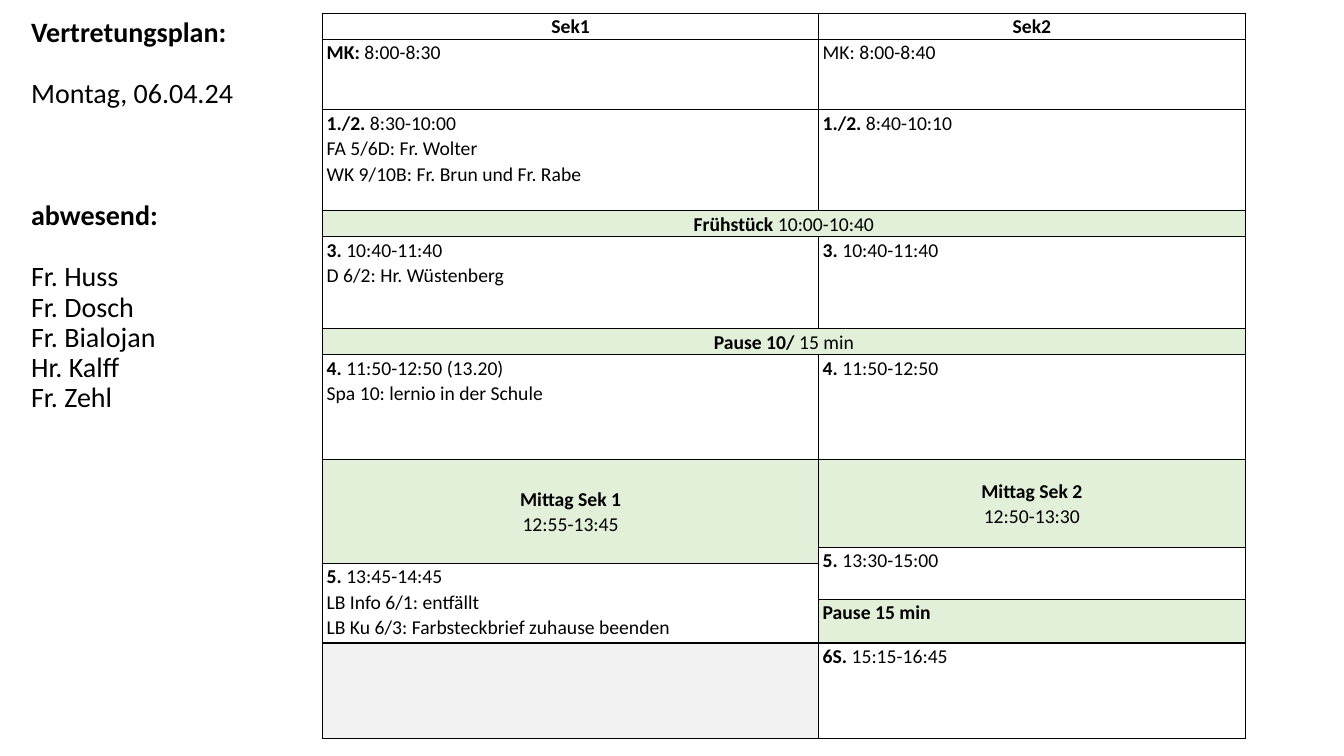
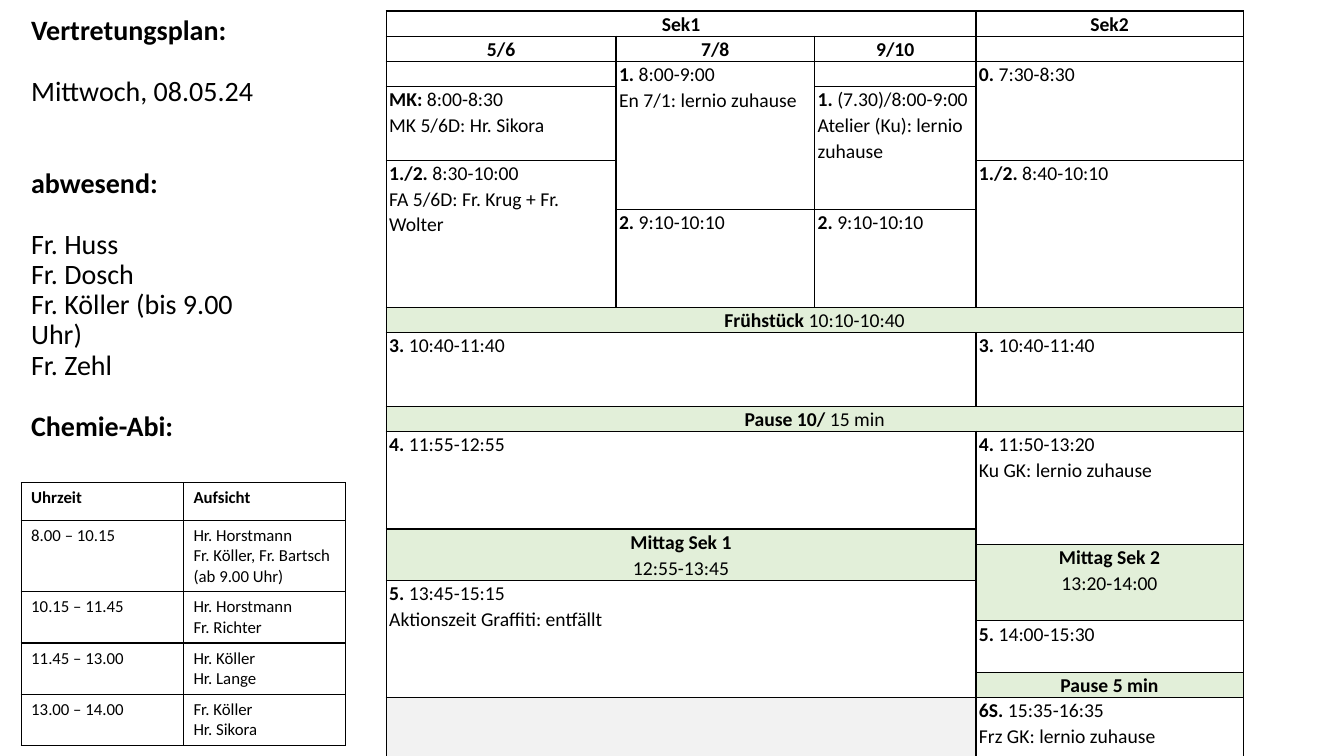
from itertools import product

from pptx import Presentation
from pptx.dml.color import RGBColor
from pptx.enum.text import MSO_ANCHOR, PP_ALIGN
from pptx.oxml.ns import qn
from pptx.util import Inches, Pt
from lxml.etree import SubElement

FONT = "Calibri"
BLACK, WHITE, GREEN, GREY = "000000", "FFFFFF", "E2EFD9", "F2F2F2"
LEFT, CENTER = PP_ALIGN.LEFT, PP_ALIGN.CENTER
TOP, MIDDLE = MSO_ANCHOR.TOP, MSO_ANCHOR.MIDDLE
SIDEBAR_LEFT, SIDEBAR_WIDTH, SIDEBAR_LINE = 0.21, 2.44, 22

STYLES = {
    "lesson": (WHITE, LEFT, TOP),
    "head": (WHITE, CENTER, MIDDLE),
    "break": (GREEN, CENTER, MIDDLE),
    "high break": (GREEN, CENTER, TOP),
    "left break": (GREEN, LEFT, TOP),
    "closed": (GREY, LEFT, TOP),
}

# Cells hold row, column, rows spanned, columns spanned, style and text; "|" ends the bold part.
MONDAY = {
    "sidebar": {
        "top": 0.13,
        "height": 4.57,
        "lines": [
            (0, "Vertretungsplan:|"),
            (1, "Montag, 06.04.24"),
            (3, "abwesend:|"),
            (1, "Fr. Huss"),
            (0, "Fr. Dosch"),
            (0, "Fr. Bialojan"),
            (0, "Hr. Kalff"),
            (0, "Fr. Zehl"),
        ],
    },
    "tables": [{
        "at": (3.2, 0.13),
        "size": 14,
        "spacing": 1.07,
        "inset": (0.04, 0),
        "columns": [4.92, 4.23],
        "rows": [0.26, 0.7, 1, 0.26, 0.91, 0.26, 1.04, 0.87, 0.16, 0.36, 0.43, 0.95],
        "cells": [
            (0, 0, 1, 1, "head", "Sek1|"),
            (0, 1, 1, 1, "head", "Sek2|"),
            (1, 0, 1, 1, "lesson", "MK: |8:00-8:30"),
            (1, 1, 1, 1, "lesson", "MK: 8:00-8:40"),
            (2, 0, 1, 1, "lesson",
             "1./2.| 8:30-10:00\nFA 5/6D: Fr. Wolter\nWK 9/10B: Fr. Brun und Fr. Rabe"),
            (2, 1, 1, 1, "lesson", "1./2. |8:40-10:10"),
            (3, 0, 1, 2, "break", "Frühstück| 10:00-10:40"),
            (4, 0, 1, 1, "lesson", "3. |10:40-11:40\nD 6/2: Hr. Wüstenberg"),
            (4, 1, 1, 1, "lesson", "3. |10:40-11:40"),
            (5, 0, 1, 2, "break", "Pause 10/ |15 min"),
            (6, 0, 1, 1, "lesson", "4. |11:50-12:50 (13.20)\nSpa 10: lernio in der Schule"),
            (6, 1, 1, 1, "lesson", "4. |11:50-12:50"),
            (7, 0, 2, 1, "break", "Mittag Sek 1|\n12:55-13:45"),
            (7, 1, 1, 1, "break", "Mittag Sek 2|\n12:50-13:30"),
            (8, 1, 2, 1, "lesson", "5.| 13:30-15:00"),
            (9, 0, 2, 1, "lesson",
             "5.| 13:45-14:45\nLB Info 6/1: entfällt\nLB Ku 6/3: Farbsteckbrief zuhause beenden"),
            (10, 1, 1, 1, "left break", "Pause 15 min|"),
            (11, 0, 1, 1, "closed", ""),
            (11, 1, 1, 1, "lesson", "6S.| 15:15-16:45"),
        ],
    }],
}

SUPERVISION = [
    ("Uhrzeit|", "Aufsicht|"),
    ("8.00 – 10.15", "Hr. Horstmann\nFr. Köller, Fr. Bartsch (ab 9.00 Uhr)"),
    ("10.15 – 11.45", "Hr. Horstmann\nFr. Richter"),
    ("11.45 – 13.00", "Hr. Köller\nHr. Lange"),
    ("13.00 – 14.00", "Fr. Köller\nHr. Sikora"),
]

WEDNESDAY = {
    "sidebar": {
        "top": 0.11,
        "height": 5.46,
        "lines": [
            (0, "Vertretungsplan:|"),
            (1, "Mittwoch, 08.05.24"),
            (2, "abwesend:|"),
            (1, "Fr. Huss"),
            (0, "Fr. Dosch"),
            (0, "Fr. Köller (bis 9.00 Uhr)"),
            (0, "Fr. Zehl"),
            (1, "Chemie-Abi:|"),
        ],
    },
    "tables": [{
        "at": (3.83, 0.11),
        "size": 14,
        "spacing": 1.07,
        "inset": (0.03, 0),
        "columns": [2.28, 1.97, 1.6, 2.65],
        "rows": [0.25, 0.25, 0.25, 0.73, 0.49, 0.97, 0.25, 0.73,
                 0.25, 0.97, 0.15, 0.36, 0.4, 0.51, 0.25, 0.75],
        "cells": [
            (0, 0, 1, 3, "head", "Sek1|"),
            (0, 3, 1, 1, "head", "Sek2|"),
            (1, 0, 1, 1, "head", "5/6|"),
            (1, 1, 1, 1, "head", "7/8|"),
            (1, 2, 1, 1, "head", "9/10|"),
            (1, 3, 1, 1, "head", ""),
            (2, 0, 1, 1, "lesson", ""),
            (2, 1, 3, 1, "lesson", "1.| 8:00-9:00\nEn 7/1: lernio zuhause"),
            (2, 2, 1, 1, "lesson", ""),
            (2, 3, 2, 1, "lesson", "0.| 7:30-8:30"),
            (3, 0, 1, 1, "lesson", "MK: |8:00-8:30\nMK 5/6D: Hr. Sikora"),
            (3, 2, 2, 1, "lesson", "1.| (7.30)/8:00-9:00\nAtelier (Ku): lernio zuhause"),
            (4, 0, 2, 1, "lesson", "1./2. |8:30-10:00\nFA 5/6D: Fr. Krug + Fr. Wolter"),
            (4, 3, 2, 1, "lesson", "1./2.| 8:40-10:10"),
            (5, 1, 1, 1, "lesson", "2.| 9:10-10:10"),
            (5, 2, 1, 1, "lesson", "2.| 9:10-10:10"),
            (6, 0, 1, 4, "break", "Frühstück| 10:10-10:40"),
            (7, 0, 1, 3, "lesson", "3. |10:40-11:40"),
            (7, 3, 1, 1, "lesson", "3. |10:40-11:40"),
            (8, 0, 1, 4, "break", "Pause 10/ |15 min"),
            (9, 0, 1, 3, "lesson", "4. |11:55-12:55"),
            (9, 3, 2, 1, "lesson", "4. |11:50-13:20\nKu GK: lernio zuhause"),
            (10, 0, 2, 3, "break", "Mittag Sek 1|\n12:55-13:45"),
            (11, 3, 2, 1, "high break", "Mittag Sek 2|\n13:20-14:00"),
            (12, 0, 3, 3, "lesson", "5.| 13:45-15:15\nAktionszeit Graffiti: entfällt"),
            (13, 3, 1, 1, "lesson", "5.| 14:00-15:30"),
            (14, 3, 1, 1, "break", "Pause 5 min|"),
            (15, 0, 1, 3, "closed", ""),
            (15, 3, 1, 1, "lesson", "6S.| 15:35-16:35\nFrz GK: lernio zuhause"),
        ],
    }, {
        "at": (0.21, 4.79),
        "size": 12,
        "spacing": 1.0,
        "inset": (0.1, 0.05),
        "columns": [1.61, 1.61],
        "rows": [0.37, 0.71, 0.51, 0.51, 0.51],
        "cells": [(row, column, 1, 1, "lesson", text)
                  for row, texts in enumerate(SUPERVISION)
                  for column, text in enumerate(texts)],
    }],
}


def color(value):
    return RGBColor.from_string(value)


def write_paragraph(para, text, size, spacing, align=LEFT):
    para.alignment = align
    para.line_spacing = spacing
    para.font.name = FONT
    para.font.size = Pt(size)
    para.font.color.rgb = color(BLACK)
    lead, mark, rest = text.partition("|")
    parts = [(lead, True), (rest, False)] if mark else [(text, False)]
    for words, bold in parts:
        if words:
            span = para.add_run()
            span.text = words
            span.font.bold = bold


def write_lines(frame, texts, size, spacing, align=LEFT):
    for index, text in enumerate(texts):
        para = frame.add_paragraph() if index else frame.paragraphs[0]
        write_paragraph(para, text, size, spacing, align)


def add_borders(cell):
    properties = cell._tc.get_or_add_tcPr()
    for side in ("a:lnL", "a:lnR", "a:lnT", "a:lnB"):
        line = SubElement(properties, qn(side), w=str(Pt(1)))
        fill = SubElement(line, qn("a:solidFill"))
        SubElement(fill, qn("a:srgbClr"), val=BLACK)


def format_cell(cell, fill, anchor, inset, size):
    add_borders(cell)
    cell.fill.solid()
    cell.fill.fore_color.rgb = color(fill)
    cell.vertical_anchor = anchor
    cell.margin_left = cell.margin_right = Inches(inset[0])
    cell.margin_top = cell.margin_bottom = Inches(inset[1])
    para = cell.text_frame.paragraphs[0]
    SubElement(para._p, qn("a:endParaRPr"), sz=str(size * 100))


def add_plan(page, plan):
    columns, rows, size = plan["columns"], plan["rows"], plan["size"]
    left, top = plan["at"]
    frame = page.shapes.add_table(len(rows), len(columns), Inches(left), Inches(top),
                                  Inches(sum(columns)), Inches(sum(rows)))
    table = frame.table
    table.first_row = table.horz_banding = False
    for column, width in zip(table.columns, columns):
        column.width = Inches(width)
    for row, height in zip(table.rows, rows):
        row.height = Inches(height)
    for row, column, down, across, style, text in plan["cells"]:
        fill, align, anchor = STYLES[style]
        for y, x in product(range(row, row + down), range(column, column + across)):
            format_cell(table.cell(y, x), fill, anchor, plan["inset"], size)
        cell = table.cell(row, column)
        if down * across > 1:
            cell.merge(table.cell(row + down - 1, column + across - 1))
        write_lines(cell.text_frame, text.split("\n"), size, plan["spacing"], align)


def add_sidebar(page, sidebar):
    box = page.shapes.add_textbox(Inches(SIDEBAR_LEFT), Inches(sidebar["top"]),
                                  Inches(SIDEBAR_WIDTH), Inches(sidebar["height"]))
    frame = box.text_frame
    frame.word_wrap = True
    gaps, texts = zip(*sidebar["lines"])
    write_lines(frame, texts, 20, 0.9)
    for para, gap in zip(frame.paragraphs, gaps):
        para.space_before = Pt(gap * SIDEBAR_LINE)


def main():
    deck = Presentation()
    deck.slide_width, deck.slide_height = Inches(13.33), Inches(7.5)
    for day in (MONDAY, WEDNESDAY):
        page = deck.slides.add_slide(deck.slide_layouts[6])
        add_sidebar(page, day["sidebar"])
        for plan in day["tables"]:
            add_plan(page, plan)
    deck.save("out.pptx")


if __name__ == "__main__":
    main()
